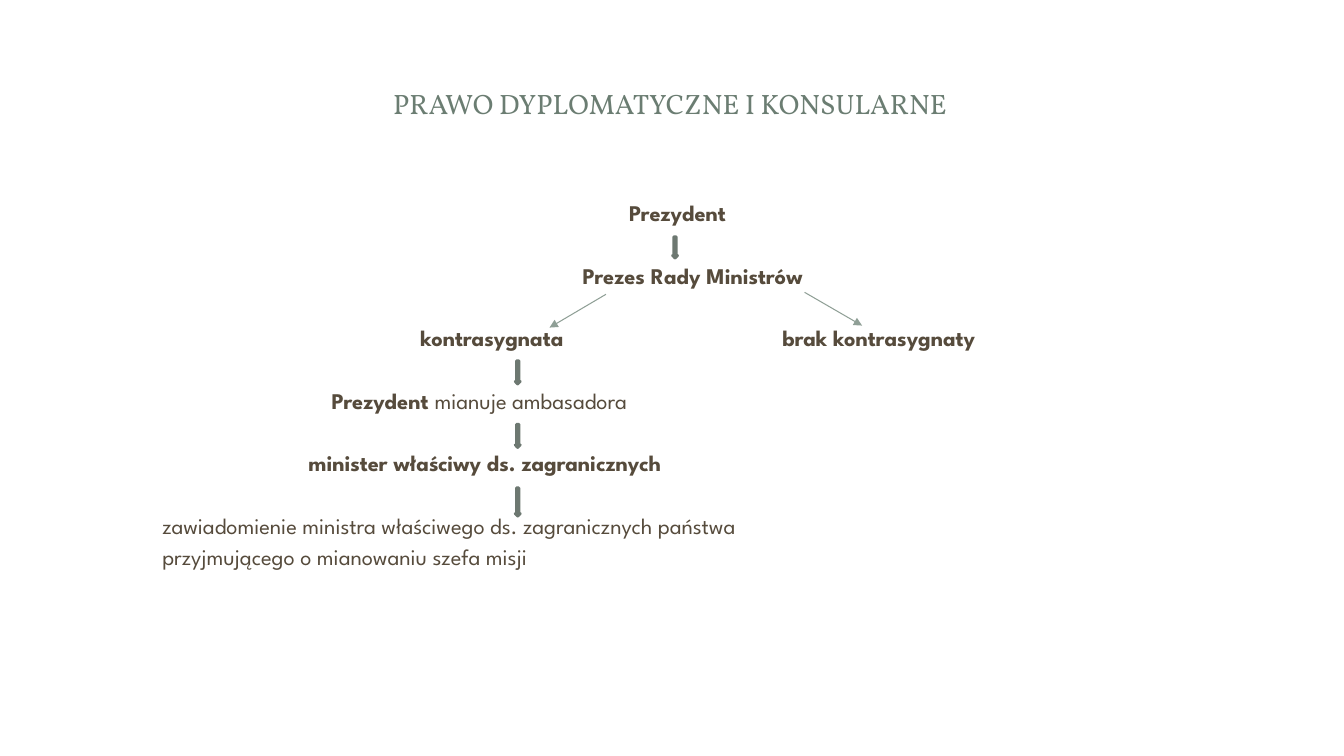
import pptx
import pptx.util
import pptx.dml.color
import pptx.enum.shapes
import pptx.enum.text
import pptx.oxml.ns
import lxml.etree

Inches = pptx.util.Inches
Pt = pptx.util.Pt
RGBColor = pptx.dml.color.RGBColor
Align = pptx.enum.text.PP_ALIGN
Anchor = pptx.enum.text.MSO_ANCHOR

WHITE = RGBColor(0xFF, 0xFF, 0xFF)
GREEN = RGBColor(0x6B, 0x7D, 0x72)
BROWN = RGBColor(0x56, 0x4B, 0x3C)
ARROW_FILL = RGBColor(0x93, 0xA2, 0x99)
ARROW_LINE = RGBColor(0x6D, 0x78, 0x71)
BRANCH_LINE = RGBColor(0x8F, 0x9F, 0x96)

deck = pptx.Presentation()
deck.slide_width = Inches(13.33)
deck.slide_height = Inches(7.5)
slide = deck.slides.add_slide(deck.slide_layouts[6])
slide.background.fill.solid()
slide.background.fill.fore_color.rgb = WHITE


def add_text(paragraphs, left, top, width, height, size=16, font="League Spartan",
             color=BROWN, align=Align.LEFT, anchor=Anchor.TOP):
    frame = slide.shapes.add_textbox(
        Inches(left), Inches(top), Inches(width), Inches(height)).text_frame
    frame.word_wrap = True
    frame.vertical_anchor = anchor
    frame.margin_left = frame.margin_right = frame.margin_top = frame.margin_bottom = 0
    for index, runs in enumerate(paragraphs):
        paragraph = frame.add_paragraph() if index else frame.paragraphs[0]
        paragraph.alignment = align
        paragraph.space_after = Pt(size * 0.2)
        for wording, bold in runs:
            run = paragraph.add_run()
            run.text = wording
            run.font.name = font
            run.font.size = Pt(size)
            run.font.bold = bold
            run.font.color.rgb = color


add_text([[("PRAWO DYPLOMATYCZNE I KONSULARNE", False)]], 0.62, 0.45, 12.05, 1.14,
         size=20, font="Vollkorn", color=GREEN, align=Align.CENTER, anchor=Anchor.MIDDLE)

FIRST_ROW = 1.98
ROW_PITCH = 0.62
steps = [
    (0, 6.24, 1.5, [[("Prezydent", True)]]),
    (1, 5.78, 2.6, [[("Prezes Rady Ministrów", True)]]),
    (2, 4.17, 2, [[("kontrasygnata", True)]]),
    (2, 7.76, 2.5, [[("brak kontrasygnaty", True)]]),
    (3, 3.29, 3.5, [[("Prezydent ", True), ("mianuje ambasadora", False)]]),
    (4, 3.06, 4, [[("minister właściwy ds. zagranicznych", True)]]),
    (5, 1.61, 6.5, [[("zawiadomienie ministra właściwego ds. zagranicznych państwa", False)],
                    [("przyjmującego o mianowaniu szefa misji", False)]]),
]
for row, left, width, paragraphs in steps:
    add_text(paragraphs, left, FIRST_ROW + row * ROW_PITCH, width, 0.31 * len(paragraphs))

for left, top, height in [(6.67, 2.35, 0.21), (5.11, 3.58, 0.23),
                          (5.11, 4.21, 0.23), (5.11, 4.84, 0.28)]:
    arrow = slide.shapes.add_shape(
        pptx.enum.shapes.MSO_SHAPE.DOWN_ARROW,
        Inches(left), Inches(top), Inches(0.05), Inches(height))
    arrow.shadow.inherit = False
    arrow.fill.solid()
    arrow.fill.fore_color.rgb = ARROW_FILL
    arrow.line.color.rgb = ARROW_LINE
    arrow.line.width = Pt(2)

for start_x, start_y, end_x, end_y in [(6.01, 2.92, 5.45, 3.25), (7.98, 2.9, 8.55, 3.23)]:
    branch = slide.shapes.add_connector(
        pptx.enum.shapes.MSO_CONNECTOR.STRAIGHT,
        Inches(start_x), Inches(start_y), Inches(end_x), Inches(end_y))
    branch.line.color.rgb = BRANCH_LINE
    branch.line.width = Pt(0.75)
    lxml.etree.SubElement(branch.line._get_or_add_ln(),
                          pptx.oxml.ns.qn("a:tailEnd"), type="triangle")
    lxml.etree.SubElement(branch._element.spPr, pptx.oxml.ns.qn("a:effectLst"))

deck.save("out.pptx")
